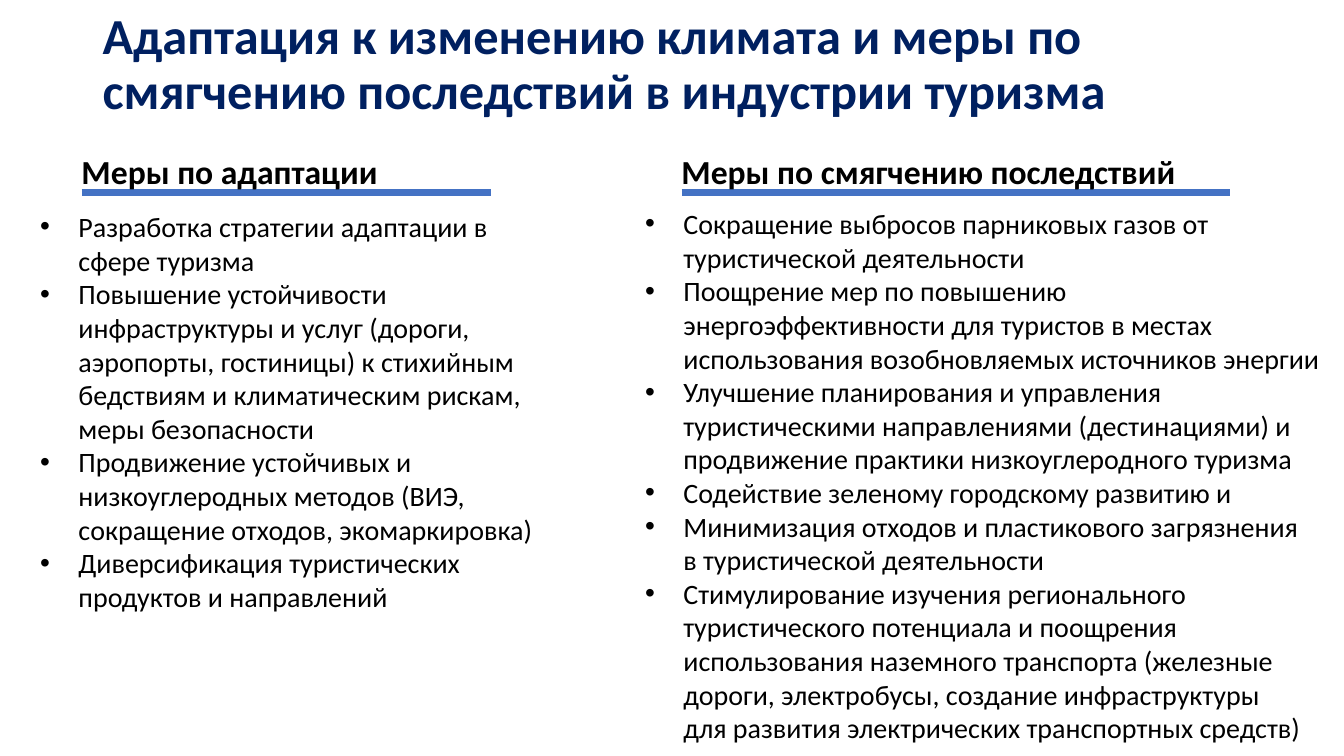
from dataclasses import dataclass
from lxml.etree import SubElement
from pptx import Presentation
from pptx.dml.color import RGBColor
from pptx.enum.shapes import MSO_CONNECTOR, MSO_SHAPE
from pptx.enum.text import MSO_ANCHOR, PP_ALIGN
from pptx.oxml.ns import qn
from pptx.util import Inches, Pt

# Content
TITLE = "Адаптация к изменению климата и меры по смягчению последствий в индустрии туризма"
ADAPT = [
    "Разработка стратегии адаптации в сфере туризма",
    "Повышение устойчивости инфраструктуры и услуг (дороги, аэропорты, гостиницы) "
    "к стихийным бедствиям и климатическим рискам, меры безопасности",
    "Продвижение устойчивых и низкоуглеродных методов (ВИЭ, сокращение отходов, экомаркировка)",
    "Диверсификация туристических продуктов и направлений",
]
SOFTEN = [
    "Сокращение выбросов парниковых газов от туристической деятельности",
    "Поощрение мер по повышению энергоэффективности для туристов в местах "
    "использования возобновляемых источников энергии",
    "Улучшение планирования и управления туристическими направлениями "
    "(дестинациями) и продвижение практики низкоуглеродного туризма",
    "Содействие зеленому городскому развитию и",
    "Минимизация отходов и пластикового загрязнения \nв туристической деятельности",
    "Стимулирование изучения регионального туристического потенциала и поощрения "
    "использования наземного транспорта (железные дороги, электробусы, создание "
    "инфраструктуры \nдля развития электрических транспортных средств)",
]
# Heading, heading left and width, rule width, list box, panel behind the list
COLUMNS = [
    ("Меры по адаптации", 0.71, 4.33, 4.06, ADAPT, (0.3, 2.03, 5.37, 4.14), False),
    ("Меры по смягчению последствий", 6.66, 5.33, 5.44, SOFTEN, (6.3, 2, 6.97, 5.49), True),
]
HEAD_TOP, HEAD_HIGH, RULE_TOP, INSET = 1.45, 0.5, 1.91, 0.1


@dataclass(frozen=True)
class Theme:
    font: str = "Calibri"
    navy: str = "002060"
    blue: str = "4472C4"
    black: str = "000000"
    white: str = "FFFFFF"
    title: int = 36
    head: int = 24
    body: int = 20
    rule: float = 4.5
    indent: float = 0.38
    alpha: int = 78


THEME = Theme()


def color(code):
    return RGBColor.from_string(code)


def bullet(para):
    props = para._p.get_or_add_pPr()
    step = Inches(THEME.indent)
    props.set("marL", str(step))
    props.set("indent", str(-step))
    SubElement(props, qn("a:buFont")).set("typeface", "Arial")
    SubElement(props, qn("a:buChar")).set("char", "•")


def write(shape, lines, size, ink=THEME.black, bold=False, dots=False,
          anchor=MSO_ANCHOR.TOP, space=None):
    frame = shape.text_frame
    frame.word_wrap = True
    frame.vertical_anchor = anchor
    for i, line in enumerate(lines):
        para = frame.add_paragraph() if i else frame.paragraphs[0]
        para.text = line
        para.alignment = PP_ALIGN.LEFT
        if space:
            para.line_spacing = space
        if dots:
            bullet(para)
        for run in para.runs:
            font = run.font
            font.name, font.size, font.bold = THEME.font, Pt(size), bold
            font.color.rgb = color(ink)


def rule(slide, left, width):
    y = Inches(RULE_TOP)
    line = slide.shapes.add_connector(
        MSO_CONNECTOR.STRAIGHT, Inches(left), y, Inches(left + width), y)
    line.line.color.rgb = color(THEME.blue)
    line.line.width = Pt(THEME.rule)
    SubElement(line._element.spPr, qn("a:effectLst"))


def panel(slide, box):
    shape = slide.shapes.add_shape(MSO_SHAPE.RECTANGLE, *map(Inches, box))
    shape.shadow.inherit = False
    shape.fill.solid()
    shape.fill.fore_color.rgb = color(THEME.white)
    tint = shape._element.spPr.find(qn("a:solidFill"))[0]
    SubElement(tint, qn("a:alpha")).set("val", str(THEME.alpha * 1000))
    shape.line.fill.background()
    return shape


def label(slide, *box):
    return slide.shapes.add_textbox(*map(Inches, box))


def main():
    deck = Presentation()
    deck.slide_width, deck.slide_height = Inches(13.33), Inches(7.5)
    slide = deck.slides.add_slide(deck.slide_layouts[6])

    # Title
    write(label(slide, 0.92, 0.19, 11.5, 0.92), [TITLE], THEME.title,
          ink=THEME.navy, bold=True, anchor=MSO_ANCHOR.MIDDLE, space=0.9)

    # Columns: rule, heading, list
    for head, left, width, span, items, box, filled in COLUMNS:
        rule(slide, left + INSET, span)
        write(label(slide, left, HEAD_TOP, width, HEAD_HIGH), [head], THEME.head, bold=True)
        body = panel(slide, box) if filled else label(slide, *box)
        write(body, items, THEME.body, dots=True)

    deck.save("out.pptx")


if __name__ == "__main__":
    main()
